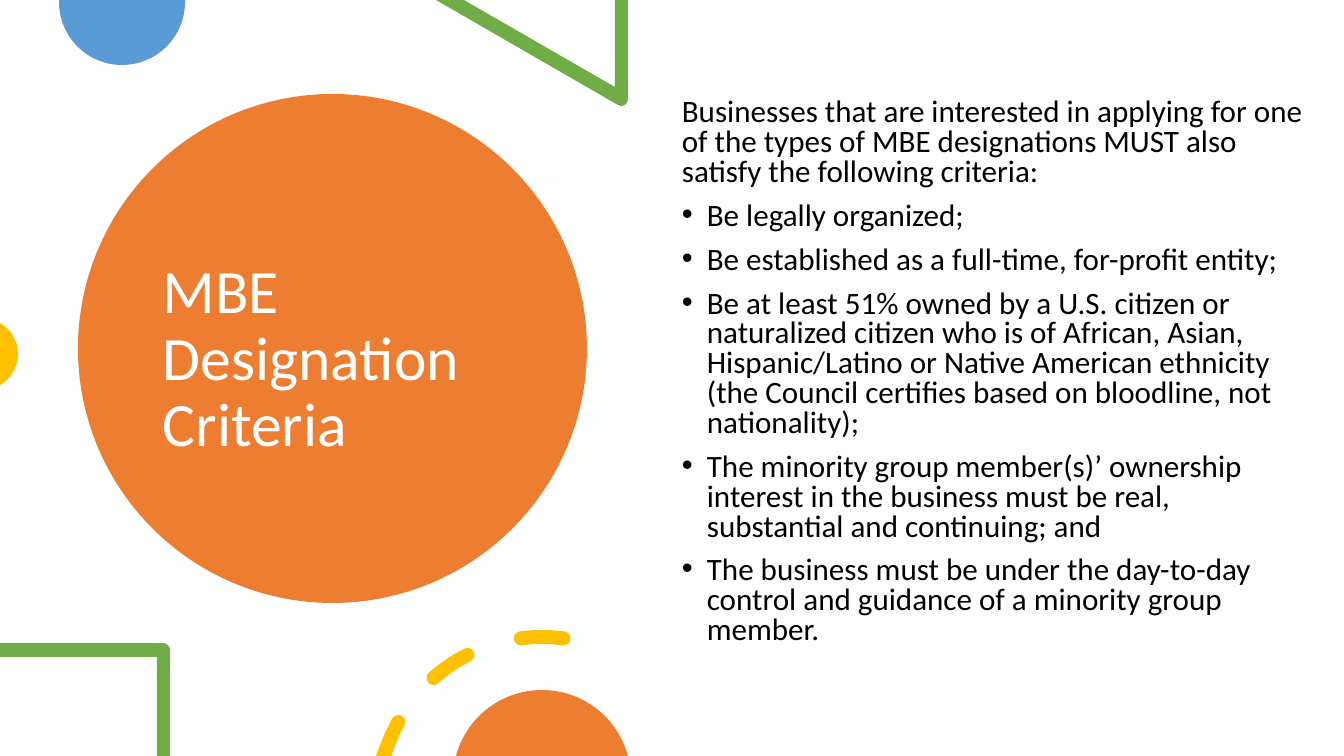
from math import ceil, cos, floor, radians, sin, tan
from lxml.etree import SubElement as Sub
from pptx import Presentation
from pptx.dml.color import RGBColor as Rgb
from pptx.enum.shapes import MSO_SHAPE as Kind
from pptx.enum.text import MSO_ANCHOR as Anchor
from pptx.oxml.ns import qn
from pptx.util import Pt

# Content
TITLE = "MBE Designation Criteria"
INTRO = ("Businesses that are interested in applying for one of the types of "
         "MBE designations MUST also satisfy the following criteria:")
RULES = [
    "Be legally organized;",
    "Be established as a full-time, for-profit entity;",
    "Be at least 51% owned by a U.S. citizen or naturalized citizen who is of "
    "African, Asian, Hispanic/Latino or Native American ethnicity (the Council "
    "certifies based on bloodline, not nationality);",
    "The minority group member(s)’ ownership interest in the business must be "
    "real, substantial and continuing; and",
    "The business must be under the day-to-day control and guidance of a "
    "minority group member.",
]

# Theme and layout, in px
THEME = dict(font="Calibri", head=44, body=22.2, white="FFFFFF", black="000000",
             orange="ED7D31", blue="5B9BD5", green="70AD47", gold="FFC000")
WIDE, HIGH = 1344, 756
DISC = (78, 94, 509, 509)
HEAD = (153, 136, 357, 449)
BODY = (672, 94, 644, 597)
INDENT = 25
PEN = 7                                   # half the width of thick strokes
RING, REACH = (542, 801), 164             # centre and radius of dashed ring
DASHES = [(228.6, 243), (262.6, 277.5)]   # start and end angles


def px(n):
    return round(n * 914400 / 100.8)


def tint(fill, name):
    fill.solid()
    fill.fore_color.rgb = Rgb.from_string(THEME[name])


def finish(shape, name):
    tint(shape.fill, name)
    shape.line.fill.background()
    shape.shadow.inherit = False


def spot(mid, r, angle):
    t = radians(angle)
    return mid[0] + r * cos(t), mid[1] + r * sin(t)


def arc(mid, r, start, end):
    """Curves along a circle, split at each quarter; clockwise from the right."""
    low, high = sorted((start, end))
    cuts = [90 * n for n in range(floor(low / 90) + 1, ceil(high / 90))]
    stops = sorted([low, *cuts, high], reverse=start > end)
    curves = []
    for a, b in zip(stops, stops[1:]):
        pull = 4 / 3 * tan(radians(b - a) / 4) * r
        (ax, ay), (bx, by) = spot(mid, r, a), spot(mid, r, b)
        (ux, uy), (vx, vy) = spot((0, 0), pull, a + 90), spot((0, 0), pull, b - 90)
        curves.append(((ax + ux, ay + uy), (bx + vx, by + vy), (bx, by)))
    return curves


def cap(angle, start):
    return arc(spot(RING, REACH, angle), PEN, start, start + 180)


def band(start, end, back):
    """Outer edge, round far end, then the inner edge."""
    return (arc(RING, REACH + PEN, start, end) + cap(end, end)
            + arc(RING, REACH - PEN, end, back))


def draw(name, *loops):
    """Fill loops of steps; a step is a point, or three points for a curve."""
    flat = [[p for s in loop for p in (s if len(s) == 3 else [s])] for loop in loops]
    flat = [[(px(x), px(y)) for x, y in points] for points in flat]
    pen = slide.shapes.build_freeform(*flat[0][0], scale=1.0)
    for i, points in enumerate(flat):
        if i:
            pen.move_to(*points[0])
        pen.add_line_segments(points[1:], close=True)
    shape = pen.convert_to_shape()
    # Join each curve's three points into one cubic segment
    lines = iter(list(shape._element.iter(qn("a:lnTo"))))
    for step in (s for loop in loops for s in loop[1:]):
        first = next(lines)
        if len(step) == 3:
            first.tag = qn("a:cubicBezTo")
            for line in (next(lines), next(lines)):
                first.append(line[0])
                line.getparent().remove(line)
    finish(shape, name)


def write(box, lines, size, color, space, gap=0):
    frame = slide.shapes.add_textbox(*map(px, box)).text_frame
    frame.word_wrap = True
    for i, line in enumerate(lines):
        para = frame.paragraphs[0] if i == 0 else frame.add_paragraph()
        para.text = line
        para.line_spacing, para.space_before = space, Pt(gap)
        para.font.name, para.font.size = THEME["font"], Pt(THEME[size])
        tint(para.font.fill, color)
    return frame


deck = Presentation()
deck.slide_width, deck.slide_height = px(WIDE), px(HIGH)
slide = deck.slides.add_slide(deck.slide_layouts[6])

# Main disc and title
finish(slide.shapes.add_shape(Kind.OVAL, *map(px, DISC)), "orange")
head = write(HEAD, [TITLE], "head", "white", 0.9)
head.vertical_anchor = Anchor.MIDDLE

# Blue circle, green triangle and gold circle at the edges
draw("blue", [(185, 0), (59, 0), (59, 2)] + arc((122, 2), 63, 180, 0))
draw("green", [(628, 0), (615, 0), (615, 87), (464, 0), (436, 0), (618, 105)]
     + arc((621, 99), PEN, 120, 0))
draw("gold", [(0, 323)] + arc((-18, 354), 36, -60, 60))

# Criteria list
body = write(BODY, [INTRO] + RULES, "body", "black", 0.8, 10)
for para in body.paragraphs[1:]:
    props = para._p.get_or_add_pPr()
    props.set("marL", str(px(INDENT)))
    props.set("indent", str(-px(INDENT)))
    Sub(props, qn("a:buFont")).set("typeface", "Arial")
    Sub(props, qn("a:buChar")).set("char", "•")
    props.append(props.find(qn("a:defRPr")))

# Green frame corner
draw("green", [(0, 643), (0, 657), (157, 657), (157, HIGH), (170, HIGH), (170, 650)]
     + arc((163, 650), PEN, 0, -90))

# Dashed ring: the first dash runs off the bottom edge
draw("gold", [(376, HIGH)] + band(195.3, 208.8, 196.7),
     *([spot(RING, REACH + PEN, a)] + band(a, b, a) + cap(a, a + 180)
       for a, b in DASHES))

# Orange circle at the bottom
draw("orange", [(456, HIGH)] + arc((542, 779), 89, 195, 345))

deck.save("out.pptx")
